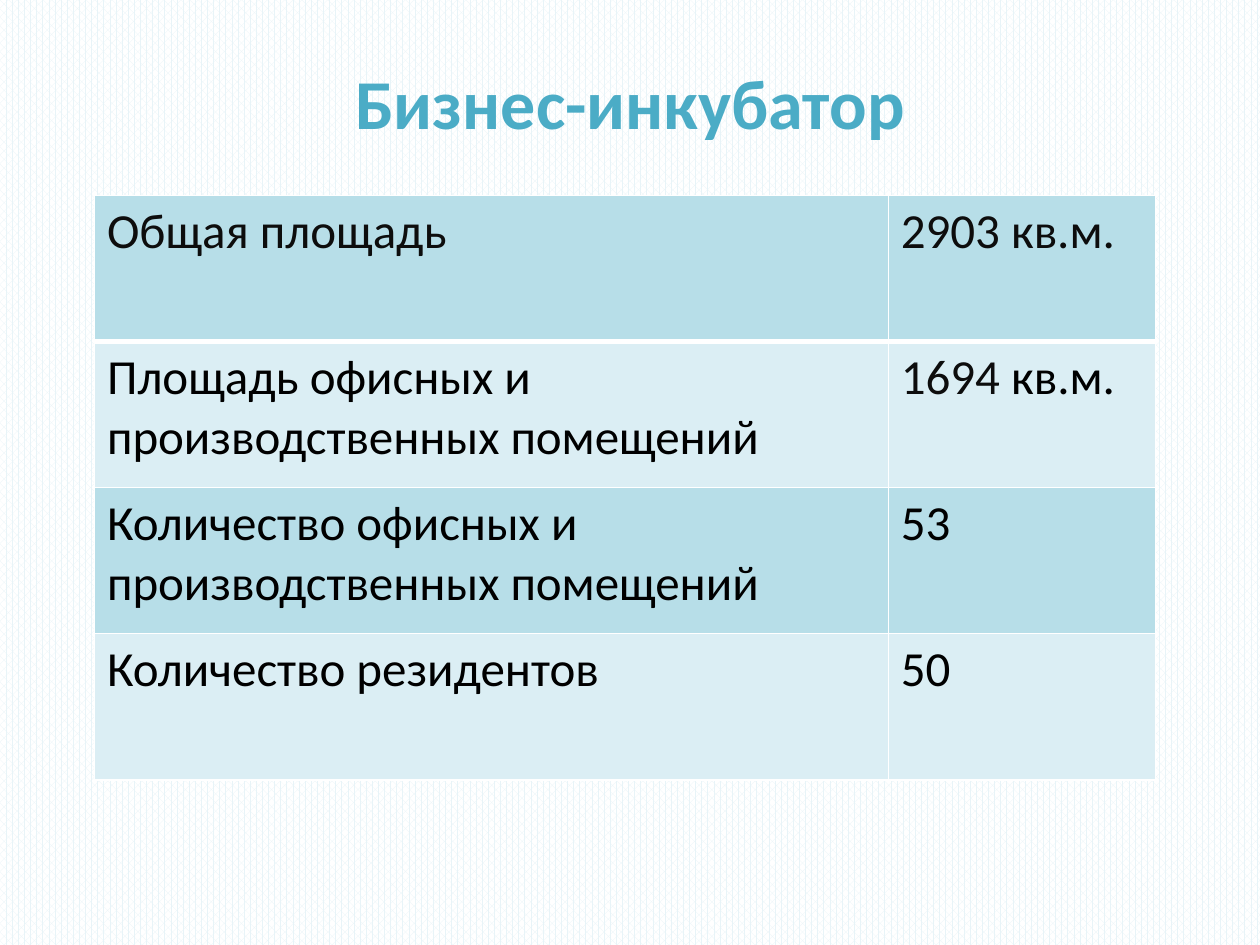
"""Build the business incubator slide: a title over a table of key figures."""
from lxml.etree import SubElement
from pptx import Presentation
from pptx.dml.color import RGBColor
from pptx.enum.dml import MSO_PATTERN
from pptx.enum.text import MSO_ANCHOR, PP_ALIGN
from pptx.oxml.ns import qn
from pptx.util import Inches, Pt

TITLE = "Бизнес-инкубатор"
ROWS = [
    [[("Общая площадь", "gray")], [("2903 кв.м.", "gray")]],
    [[("Площадь офисных и производственных помещений", "black")],
     [("1694", "gray"), (" кв.м.", "black")]],
    [[("Количество офисных и производственных помещений", "black")],
     [("53", "black")]],
    [[("Количество резидентов", "black")], [("50", "black")]],
]
THEME = {
    "font": "Calibri", "head": 40, "body": 28,
    "title": "4BACC6", "gray": "0D0D0D", "black": "000000",
    "bands": ("B7DEE8", "DBEEF4"), "rule": "FFFFFF",
    "dots": "E8F4F8", "back": "FFFFFF",
}
WIDE, HIGH = 10, 7.5
LEFT, TOP = 0.75, 1.55
COLS = (6.3, 2.12)
ROW = 1.16
THIN, THICK = 1, 3


def color(name):
    return RGBColor.from_string(THEME.get(name, name))


def style(run, size, tint, bold=False):
    font = run.font
    font.name, font.size, font.bold = THEME["font"], Pt(THEME[size]), bold
    font.color.rgb = color(tint)


def edge(cell, side, width):
    props = cell._tc.get_or_add_tcPr()
    line = SubElement(props, qn(f"a:ln{side}"), w=str(Pt(width)))
    fill = SubElement(line, qn("a:solidFill"))
    SubElement(fill, qn("a:srgbClr"), val=THEME["rule"])


def add_title(slide):
    box = slide.shapes.add_textbox(
        Inches(0.5), Inches(0.3), Inches(WIDE - 1), Inches(1.01))
    frame = box.text_frame
    frame.word_wrap = True
    frame.vertical_anchor = MSO_ANCHOR.MIDDLE
    frame.text = TITLE
    para = frame.paragraphs[0]
    para.alignment = PP_ALIGN.CENTER
    style(para.runs[0], "head", "title", True)


def fill_cell(cell, runs, row):
    para = cell.text_frame.paragraphs[0]
    for text, tint in runs:
        run = para.add_run()
        run.text = text
        style(run, "body", tint)
    widths = {"L": THIN, "R": THIN, "T": THICK if row == 1 else THIN,
              "B": THICK if row == 0 else THIN}
    for side, width in widths.items():
        edge(cell, side, width)
    cell.fill.solid()
    cell.fill.fore_color.rgb = color(THEME["bands"][row % 2])


def add_grid(slide):
    table = slide.shapes.add_table(
        len(ROWS), len(COLS), Inches(LEFT), Inches(TOP),
        Inches(sum(COLS)), Inches(ROW * len(ROWS))).table
    for col, width in zip(table.columns, COLS):
        col.width = Inches(width)
    for row, cells in enumerate(ROWS):
        table.rows[row].height = Inches(ROW)
        for col, runs in enumerate(cells):
            fill_cell(table.cell(row, col), runs, row)


def main():
    deck = Presentation()
    deck.slide_width, deck.slide_height = Inches(WIDE), Inches(HIGH)
    slide = deck.slides.add_slide(deck.slide_layouts[6])
    fill = slide.background.fill
    fill.patterned()
    fill.pattern = MSO_PATTERN.PERCENT_70
    fill.fore_color.rgb = color("dots")
    fill.back_color.rgb = color("back")
    add_title(slide)
    add_grid(slide)
    deck.save("out.pptx")


if __name__ == "__main__":
    main()
